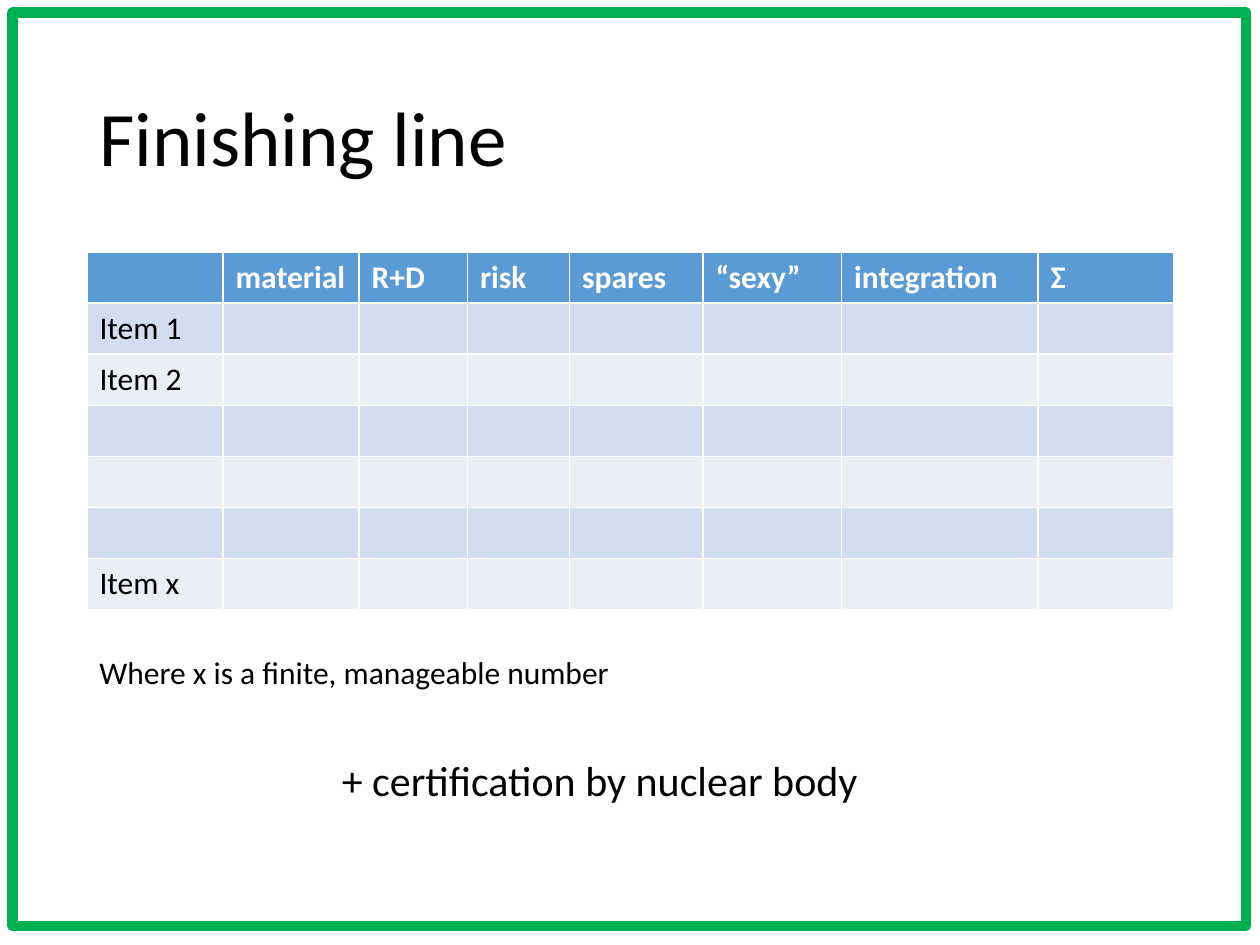
from pptx import Presentation
from pptx.dml.color import RGBColor
from pptx.enum import shapes, text
from pptx.util import Inches, Pt


def rgb(value):
    return RGBColor.from_string(value)


def write(tf, words, size=18, color="000000", bold=False,
          align=text.PP_ALIGN.LEFT, anchor=text.MSO_ANCHOR.TOP, spacing=1.0):
    tf.word_wrap = True
    tf.vertical_anchor = anchor
    p = tf.paragraphs[0]
    p.alignment = align
    p.line_spacing = spacing
    r = p.add_run()
    r.text = words
    r.font.name = "Calibri"
    r.font.size = Pt(size)
    r.font.bold = bold
    r.font.color.rgb = rgb(color)


prs = Presentation()
prs.slide_width, prs.slide_height = Inches(10), Inches(7.5)
s = prs.slides.add_slide(prs.slide_layouts[6])

# Green frame
sp = s.shapes.add_shape(shapes.MSO_SHAPE.RECTANGLE,
                        Inches(0.1), Inches(0.1), Inches(9.79), Inches(7.25))
sp.shadow.inherit = False
sp.fill.background()
sp.line.color.rgb = rgb("00B050")
sp.line.width = Pt(6)

# Title
sp = s.shapes.add_textbox(Inches(0.69), Inches(0.4), Inches(8.62), Inches(1.45))
write(sp.text_frame, "Finishing line", size=44,
      anchor=text.MSO_ANCHOR.MIDDLE, spacing=0.9)

# Scoring table: the default table style supplies the white cell borders
headers = ["", "material", "R+D", "risk", "spares", "“sexy”", "integration", "Σ"]
items = ["Item 1", "Item 2", "", "", "", "Item x"]
widths = [1.08, 1.08, 0.86, 0.81, 1.06, 1.1, 1.56, 1.08]
rows = [headers] + [[item] + [""] * (len(headers) - 1) for item in items]
table = s.shapes.add_table(len(rows), len(headers), Inches(0.69), Inches(2),
                           Inches(sum(widths)), Inches(2.84)).table
for column, width in zip(table.columns, widths):
    column.width = Inches(width)
for i, row in enumerate(rows):
    header = i == 0
    fill = "5B9BD5" if header else ("EAEFF7", "D2DEEF")[i % 2]
    for j, words in enumerate(row):
        cell = table.cell(i, j)
        cell.fill.solid()
        cell.fill.fore_color.rgb = rgb(fill)
        if words:
            write(cell.text_frame, words, bold=header,
                  color="FFFFFF" if header else "000000")

# Notes below the table
sp = s.shapes.add_textbox(Inches(0.69), Inches(5.13), Inches(6.09), Inches(0.4))
write(sp.text_frame, "Where x is a finite, manageable number")
sp = s.shapes.add_textbox(Inches(2.12), Inches(5.94), Inches(5.28), Inches(0.5))
write(sp.text_frame, "+ certification by nuclear body", size=24,
      align=text.PP_ALIGN.CENTER)

prs.save("out.pptx")
